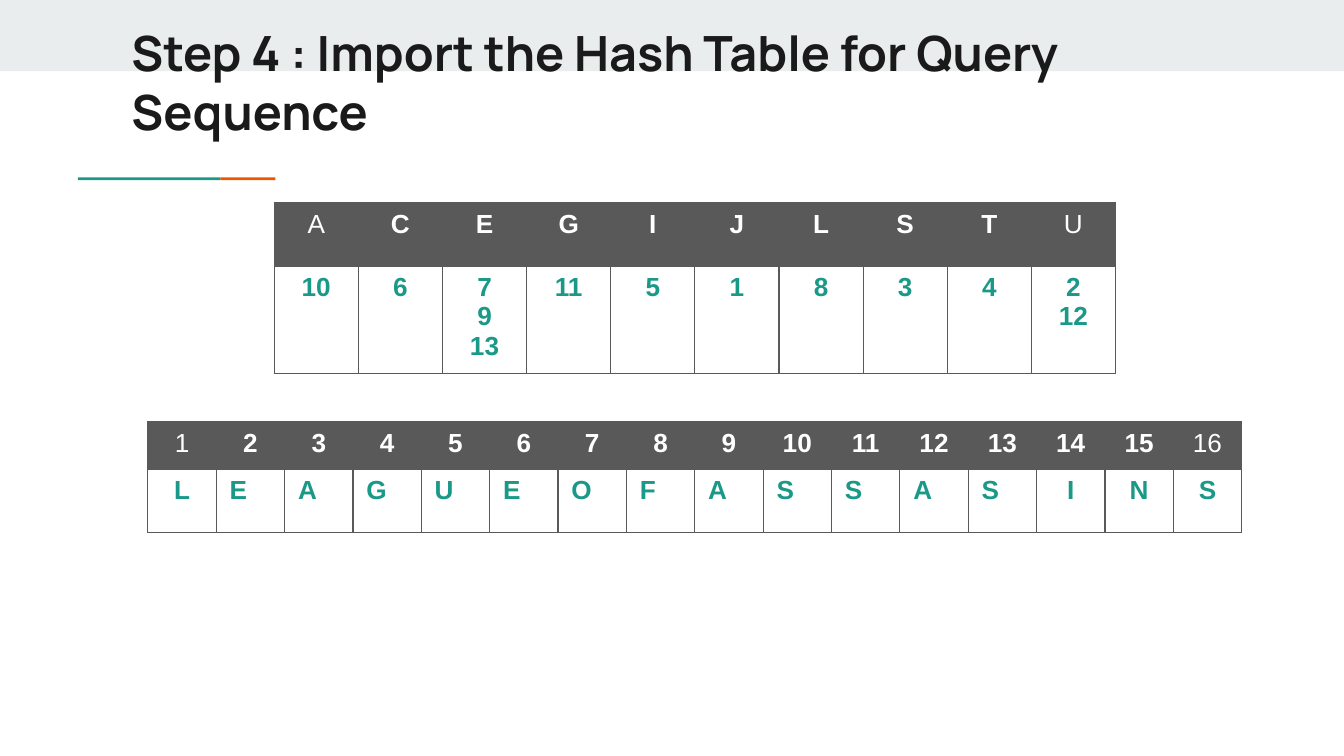
from dataclasses import dataclass

from lxml.etree import SubElement
from pptx import Presentation
from pptx.dml.color import RGBColor
from pptx.enum.shapes import MSO_SHAPE
from pptx.enum.text import MSO_ANCHOR, PP_ALIGN
from pptx.oxml.ns import qn
from pptx.util import Inches, Pt

COLORS = {
    "band": "E9EDEE",
    "teal": "1A9988",
    "orange": "EB5600",
    "title": "1A1A1A",
    "gray": "595959",
    "white": "FFFFFF",
}


@dataclass
class Bar:
    left: float
    top: float
    width: float
    height: float
    color: str


@dataclass
class Grid:
    left: float
    top: float
    width: float
    row_heights: tuple[float, float]
    header: list[str]
    values: list[str]
    left_aligned: range = range(0)  # value columns that are not centred


BARS = [
    Bar(0, 0, 10, 0.53, "band"),
    Bar(0.58, 1.32, 1.06, 0.02, "teal"),
    Bar(1.64, 1.32, 0.41, 0.02, "orange"),
]

GRIDS = [
    # Positions of the query sequence
    Grid(1.1, 3.14, 8.14, (0.35, 0.47),
         [str(n) for n in range(1, 17)], list("LEAGUEOFASSASINS"), range(1, 13)),
    # Hash table: letter and its positions
    Grid(2.04, 1.51, 6.26, (0.47, 0.8),
         list("ACEGIJLSTU"),
         ["10", "6", "7\n9\n13", "11", "5", "1", "8", "3", "4", "2\n12"]),
]


def rgb(name: str) -> RGBColor:
    return RGBColor.from_string(COLORS[name])


def write(tf, text: str, *, size: int, color: str, font: str = "Arial",
          bold: bool = True, align=PP_ALIGN.LEFT) -> None:
    for i, line in enumerate(text.split("\n")):
        p = tf.paragraphs[0] if i == 0 else tf.add_paragraph()
        p.alignment = align
        r = p.add_run()
        r.text = line
        r.font.size = Pt(size)
        r.font.name = font
        r.font.bold = bold
        r.font.color.rgb = rgb(color)


def add_bar(s, bar: Bar) -> None:
    sp = s.shapes.add_shape(MSO_SHAPE.RECTANGLE, Inches(bar.left), Inches(bar.top),
                            Inches(bar.width), Inches(bar.height))
    sp.shadow.inherit = False
    sp.fill.solid()
    sp.fill.fore_color.rgb = rgb(bar.color)
    sp.line.fill.background()


def set_borders(cell, color: str) -> None:
    """Line all four sides; call before the fill, which must follow in the XML."""
    tc_pr = cell._tc.get_or_add_tcPr()
    for side in ("a:lnL", "a:lnR", "a:lnT", "a:lnB"):
        ln = SubElement(tc_pr, qn(side), w=str(Pt(0.75)))
        fill = SubElement(ln, qn("a:solidFill"))
        SubElement(fill, qn("a:srgbClr"), val=COLORS[color])


def add_grid(s, grid: Grid) -> None:
    count = len(grid.header)
    table = s.shapes.add_table(2, count, Inches(grid.left), Inches(grid.top),
                               Inches(grid.width), Inches(sum(grid.row_heights))).table
    table.horz_banding = False
    for column in table.columns:
        column.width = Inches(grid.width / count)
    for row, height in zip(table.rows, grid.row_heights):
        row.height = Inches(height)

    for i, texts in enumerate((grid.header, grid.values)):
        is_header = i == 0
        for j, text in enumerate(texts):
            cell = table.cell(i, j)
            set_borders(cell, "gray")
            cell.fill.solid()
            cell.fill.fore_color.rgb = rgb("gray" if is_header else "white")
            to_left = not is_header and j in grid.left_aligned
            write(cell.text_frame, text, size=14,
                  color="white" if is_header else "teal",
                  bold=not (is_header and j in (0, count - 1)),
                  align=PP_ALIGN.LEFT if to_left else PP_ALIGN.CENTER)


def add_title(s, text: str) -> None:
    tf = s.shapes.add_textbox(Inches(0.88), Inches(0.56),
                              Inches(7.57), Inches(0.58)).text_frame
    tf.word_wrap = True
    tf.vertical_anchor = MSO_ANCHOR.BOTTOM
    tf.margin_left = tf.margin_right = Inches(0.1)
    tf.margin_top = tf.margin_bottom = Inches(0.1)
    write(tf, text, size=26, color="title", font="Manrope")


def main() -> None:
    prs = Presentation()
    prs.slide_width = Inches(10)
    prs.slide_height = Inches(10 * 9 / 16)  # widescreen
    s = prs.slides.add_slide(prs.slide_layouts[6])

    # Top band and accent line
    for bar in BARS:
        add_bar(s, bar)

    add_title(s, "Step 4 : Import the Hash Table for Query Sequence")

    # Tables
    for grid in GRIDS:
        add_grid(s, grid)

    prs.save("out.pptx")


if __name__ == "__main__":
    main()
